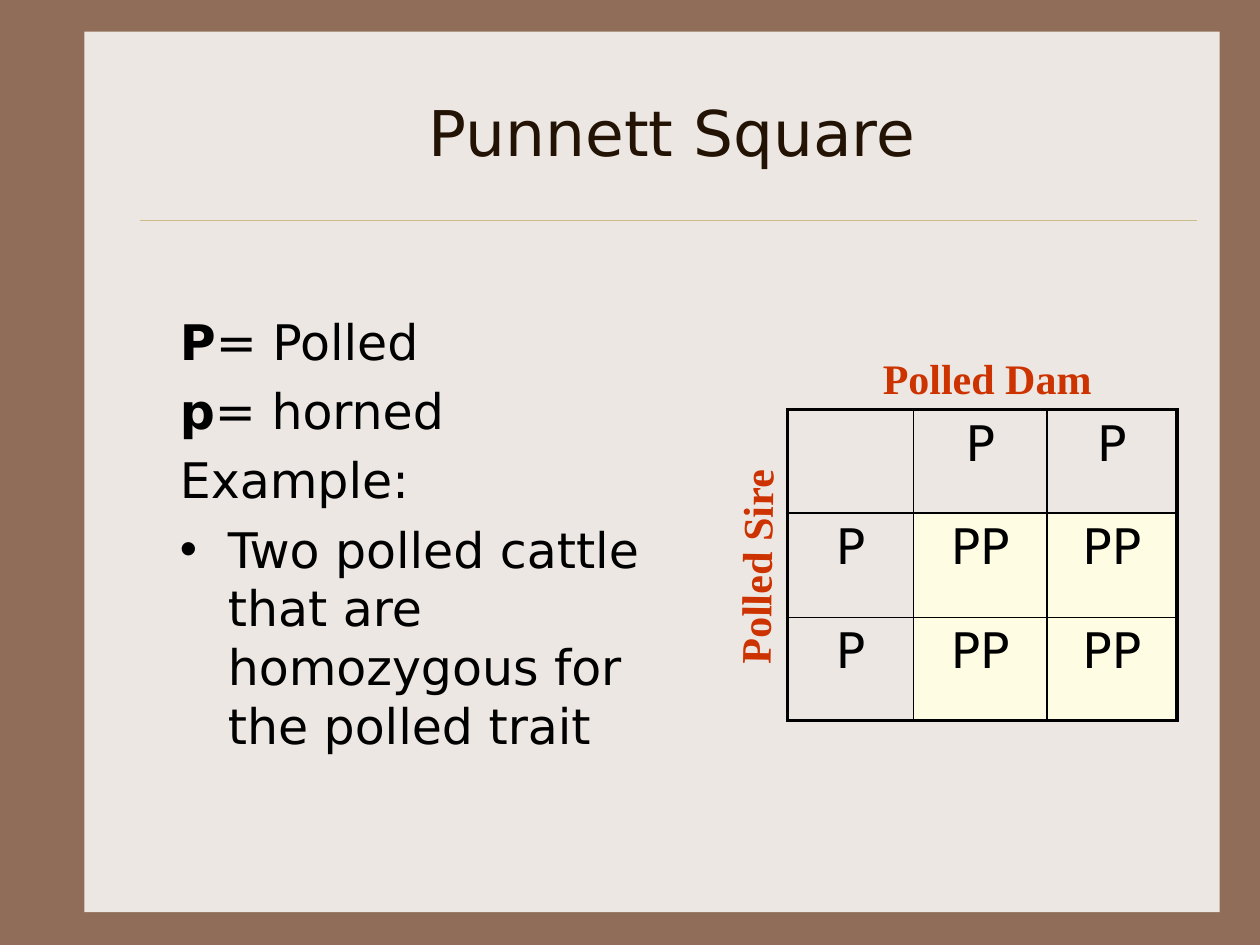
from lxml.etree import SubElement
from pptx import Presentation
from pptx.dml.color import RGBColor
from pptx.enum.shapes import MSO_CONNECTOR, MSO_SHAPE
from pptx.enum.text import MSO_ANCHOR, PP_ALIGN
from pptx.oxml import parse_xml
from pptx.oxml.ns import nsdecls, qn
from pptx.util import Inches, Pt


def rgb(value):
    return RGBColor.from_string(value)


def add_run(p, text, size, color="000000", font="DejaVu Sans", bold=False):
    r = p.add_run()
    r.text = text
    r.font.size = Pt(size)
    r.font.name = font
    r.font.bold = bold
    r.font.color.rgb = rgb(color)


prs = Presentation()
prs.slide_width, prs.slide_height = Inches(10), Inches(7.5)
s = prs.slides.add_slide(prs.slide_layouts[5])

# Background, panel and rule
s.background.fill.solid()
s.background.fill.fore_color.rgb = rgb("906D58")
panel = s.shapes.add_shape(MSO_SHAPE.RECTANGLE, Inches(0.67), Inches(0.25),
                           Inches(9.01), Inches(6.99))
panel.shadow.inherit = False
panel.fill.solid()
panel.fill.fore_color.rgb = rgb("EDE7E3")
panel.line.fill.background()

rule = s.shapes.add_connector(MSO_CONNECTOR.STRAIGHT, Inches(1.11), Inches(1.75),
                              Inches(9.5), Inches(1.75))
rule.line.color.rgb = rgb("CBBD83")
rule.line.width = Pt(0.25)
SubElement(rule.element.spPr, qn("a:effectLst"))

# Title, brought in front of the panel
title = s.shapes.title
title.left, title.top = Inches(1.17), Inches(0.42)
title.width, title.height = Inches(8.33), Inches(1.25)
title.element.getparent().append(title.element)
tf = title.text_frame
tf.vertical_anchor = MSO_ANCHOR.MIDDLE
p = tf.paragraphs[0]
p.alignment = PP_ALIGN.CENTER
add_run(p, "Punnett Square", 36, "221304")

# Key and example
body = s.shapes.add_textbox(Inches(1.33), Inches(2.42), Inches(4.08), Inches(4.5))
tf = body.text_frame
tf.word_wrap = True
lines = [("P", "= Polled"), ("p", "= horned"), ("", "Example:"),
         ("", "Two polled cattle that are homozygous for the polled trait")]
for i, (allele, text) in enumerate(lines):
    p = tf.paragraphs[0] if i == 0 else tf.add_paragraph()
    pPr = p._p.get_or_add_pPr()
    pPr.set("marL", str(Inches(0.38)))
    pPr.set("indent", str(-Inches(0.38)))
    if i == len(lines) - 1:
        SubElement(pPr, qn("a:buFont"), typeface="Arial")
        SubElement(pPr, qn("a:buChar"), char="•")
    else:
        SubElement(pPr, qn("a:buNone"))
    if i:
        p.space_before = Pt(6)
    if allele:
        add_run(p, allele, 28, bold=True)
    add_run(p, text, 28)

# Punnett square: each offspring joins its sire and dam alleles
dam, sire = ["P", "P"], ["P", "P"]
rows = [[""] + dam] + [[a] + [a + b for b in dam] for a in sire]
table = s.shapes.add_table(3, 3, Inches(6.25), Inches(3.25),
                           Inches(3.09), Inches(2.47)).table
table.first_row = table.horz_banding = False
for column, width in zip(table.columns, [1, 1.06, 1.03]):
    column.width = Inches(width)
for row, height in zip(table.rows, [0.82, 0.83, 0.82]):
    row.height = Inches(height)

for i, row in enumerate(rows):
    for j, text in enumerate(row):
        cell = table.cell(i, j)
        if i and j:
            cell.fill.solid()
            cell.fill.fore_color.rgb = rgb("FEFDE3")
        else:
            cell.fill.background()
        p = cell.text_frame.paragraphs[0]
        p.alignment = PP_ALIGN.CENTER
        if text:
            add_run(p, text, 28)
        # Thick outer borders, thin inner ones
        outer = {"lnL": j == 0, "lnR": j == 2, "lnT": i == 0, "lnB": i == 2}
        for k, (side, thick) in enumerate(outer.items()):
            cell._tc.get_or_add_tcPr().insert(k, parse_xml(
                f'<a:{side} {nsdecls("a")} w="{Pt(2.25 if thick else 1)}">'
                f'<a:solidFill><a:srgbClr val="000000"/></a:solidFill></a:{side}>'))

# Parent labels
for text, left, top, angle in [("Polled Dam", 6.67, 2.75, 0),
                               ("Polled Sire", 4.83, 4.25, 270.9)]:
    label = s.shapes.add_textbox(Inches(left), Inches(top), Inches(2.33), Inches(0.5))
    label.rotation = angle
    label.text_frame.word_wrap = True
    p = label.text_frame.paragraphs[0]
    p.alignment = PP_ALIGN.CENTER
    add_run(p, text, 24, "CC3300", "Times New Roman", True)

prs.save("out.pptx")
